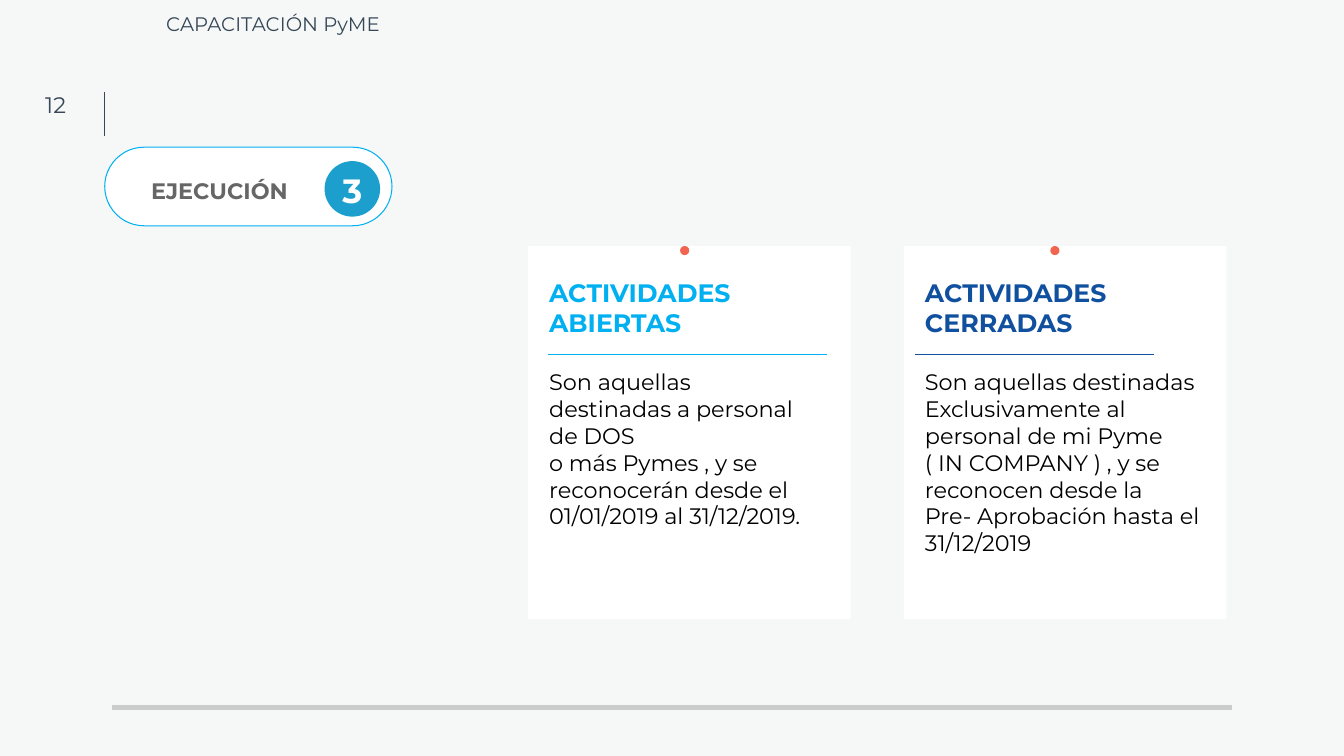
from lxml.etree import SubElement
from pptx import Presentation
from pptx.dml.color import RGBColor
from pptx.enum.shapes import MSO_CONNECTOR, MSO_SHAPE
from pptx.enum.text import MSO_ANCHOR, MSO_AUTO_SIZE, PP_ALIGN
from pptx.oxml.ns import qn
from pptx.util import Cm, Pt

FONT = "Montserrat"
COLORS = {
    "background": "F6F8F8", "white": "FFFFFF", "black": "000000",
    "slate": "374756", "gray": "666666", "rule": "CCCCCC",
    "sky": "00B0F0", "navy": "10509E", "badge": "1D9FCE", "coral": "F16450",
}
HEADER = "CAPACITACIÓN PyME"
PAGE_NUMBER = "12"
STEP, STEP_NUMBER = "EJECUCIÓN", "3"
# Horizontal places in cm: card, text (left, width), rule (start, end), dot
CARDS = [
    {"heading": "ACTIVIDADES ABIERTAS", "color": "sky",
     "body": "Son aquellas destinadas a personal de DOS \v"
             "o más Pymes , y se reconocerán desde el 01/01/2019 al 31/12/2019.",
     "card": 13.31, "text": (13.59, 7.24), "rule": (13.82, 20.83), "dot": 17.14},
    {"heading": "ACTIVIDADES CERRADAS", "color": "navy",
     "body": "Son aquellas destinadas Exclusivamente al personal de mi Pyme\v"
             "( IN COMPANY ) , y se reconocen desde la \v"
             "Pre- Aprobación hasta el 31/12/2019",
     "card": 22.78, "text": (23.06, 7.85), "rule": (23.06, 29.08), "dot": 26.47},
]
CARD_TOP, CARD_WIDTH, CARD_HEIGHT = 6.2, 8.13, 9.4
TEXT_TOP, TEXT_HEIGHT, RULE_Y, DOT = 6.73, 8.6, 8.94, 0.23


def rgb(name):
    return RGBColor.from_string(COLORS[name])


def add_filled(page, kind, left, top, width, height, fill, line=None):
    shape = page.shapes.add_shape(kind, Cm(left), Cm(top), Cm(width), Cm(height))
    shape.shadow.inherit = False
    shape.fill.solid()
    shape.fill.fore_color.rgb = rgb(fill)
    if line:
        shape.line.color.rgb = rgb(line)
        shape.line.width = Pt(0.75)
    else:
        shape.line.fill.background()
    return shape


def add_rule(page, x1, y1, x2, y2, color, width=0.75):
    rule = page.shapes.add_connector(
        MSO_CONNECTOR.STRAIGHT, Cm(x1), Cm(y1), Cm(x2), Cm(y2))
    rule.line.color.rgb = rgb(color)
    rule.line.width = Pt(width)
    SubElement(rule._element.spPr, qn("a:effectLst"))


def place_text(box, left, top, width, height, lines, inset=0.25,
               anchor=MSO_ANCHOR.TOP, align=PP_ALIGN.LEFT, gap=0):
    """Move box to the front and fill it with (text, size, color, bold) lines."""
    box._element.getparent().append(box._element)
    box.left, box.top, box.width, box.height = map(Cm, (left, top, width, height))
    frame = box.text_frame
    frame.word_wrap = True
    frame.auto_size = MSO_AUTO_SIZE.NONE
    frame.vertical_anchor = anchor
    frame.margin_left = frame.margin_right = Cm(inset)
    frame.margin_top = frame.margin_bottom = Cm(inset)
    for index, (text, size, color, bold) in enumerate(lines):
        para = frame.add_paragraph() if index else frame.paragraphs[0]
        para.text = text
        para.alignment = align
        para.space_before = Pt(gap if index else 0)
        if box.is_placeholder:
            properties = para._p.get_or_add_pPr()
            properties.set("marL", "0")
            properties.set("indent", "0")
            SubElement(properties, qn("a:buNone"))
        for span in para.runs:
            span.font.name = FONT
            span.font.size = Pt(size)
            span.font.bold = bold
            span.font.color.rgb = rgb(color)


def add_text(page, *place_and_lines, **options):
    place_text(page.shapes.add_textbox(0, 0, 0, 0), *place_and_lines, **options)


def main():
    deck = Presentation()
    deck.slide_width, deck.slide_height = Cm(33.87), Cm(19.05)
    page = deck.slides.add_slide(deck.slide_layouts.get_by_name("Two Content"))
    page.background.fill.solid()
    page.background.fill.fore_color.rgb = rgb("background")
    title, *bodies = list(page.placeholders)[:3]

    pill = add_filled(page, MSO_SHAPE.ROUNDED_RECTANGLE,
                      2.64, 3.71, 7.24, 1.98, "white", "sky")
    pill.adjustments[0] = 0.5
    add_rule(page, 2.82, 17.83, 31.04, 17.83, "rule", 3)
    add_rule(page, 2.64, 2.31, 2.64, 3.43, "slate")
    add_text(page, 0.81, 2.31, 1.68, 0.66, [(PAGE_NUMBER, 16, "slate", False)],
             inset=0.33, anchor=MSO_ANCHOR.MIDDLE)
    add_text(page, 4.04, 0.15, 13.59, 0.76, [(HEADER, 14, "slate", False)],
             inset=0.15)
    place_text(title, 3.56, 4.22, 4.93, 1.4, [(STEP, 16, "gray", True)])
    add_filled(page, MSO_SHAPE.OVAL, 8.18, 4.06, 1.4, 1.4, "badge")
    add_text(page, 8.18, 4.04, 1.4, 1.4, [(STEP_NUMBER, 24, "white", True)],
             align=PP_ALIGN.CENTER)

    for card, body in zip(CARDS, bodies):
        add_filled(page, MSO_SHAPE.RECTANGLE, card["card"], CARD_TOP,
                   CARD_WIDTH, CARD_HEIGHT, "white")
        start, end = card["rule"]
        add_rule(page, start, RULE_Y, end, RULE_Y, card["color"])
        left, width = card["text"]
        place_text(body, left, TEXT_TOP, width, TEXT_HEIGHT,
                   [(card["heading"], 18, card["color"], True),
                    (card["body"], 16, "black", False)], gap=22)
        add_filled(page, MSO_SHAPE.OVAL, card["dot"], CARD_TOP, DOT, DOT, "coral")

    deck.save("out.pptx")


if __name__ == "__main__":
    main()
